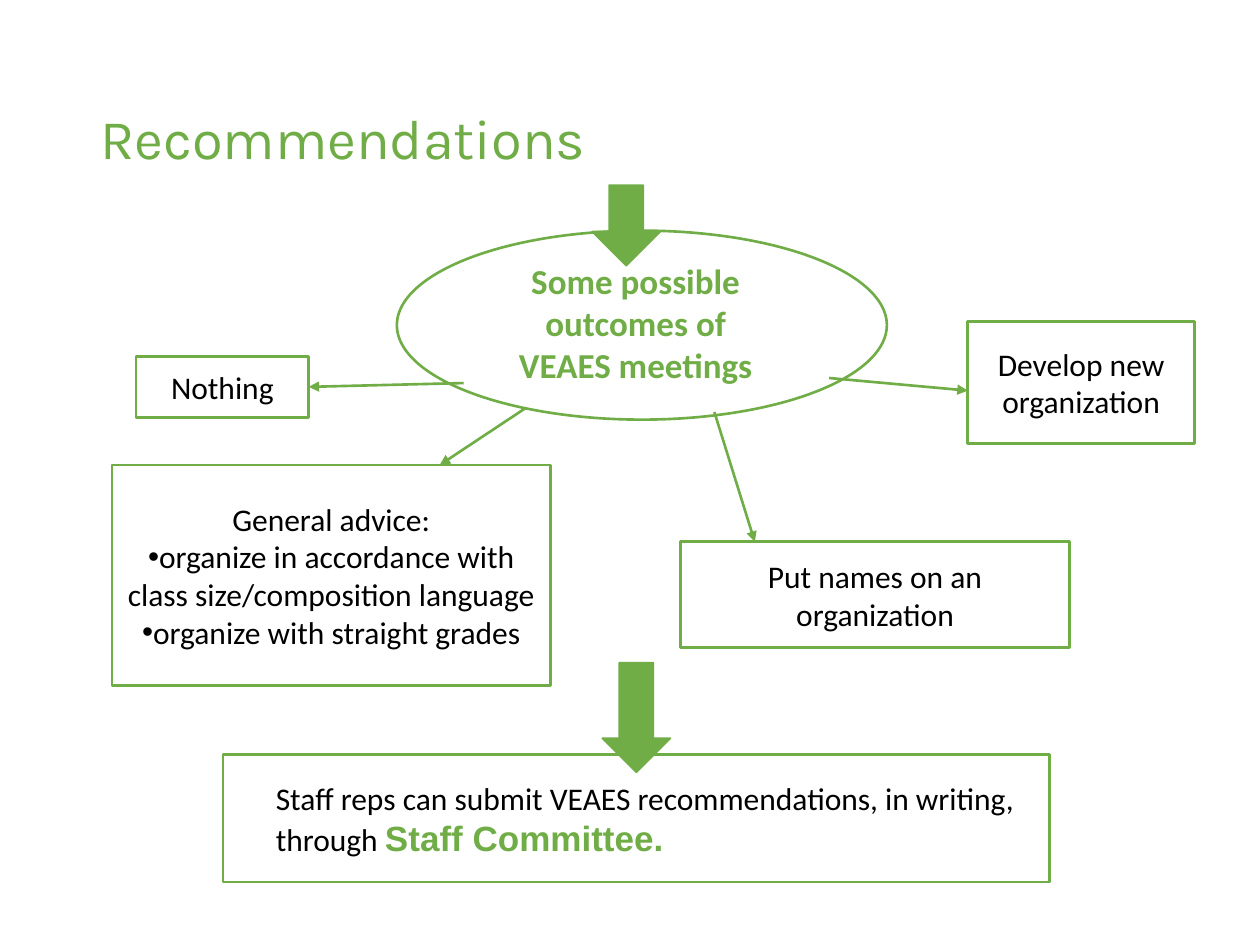
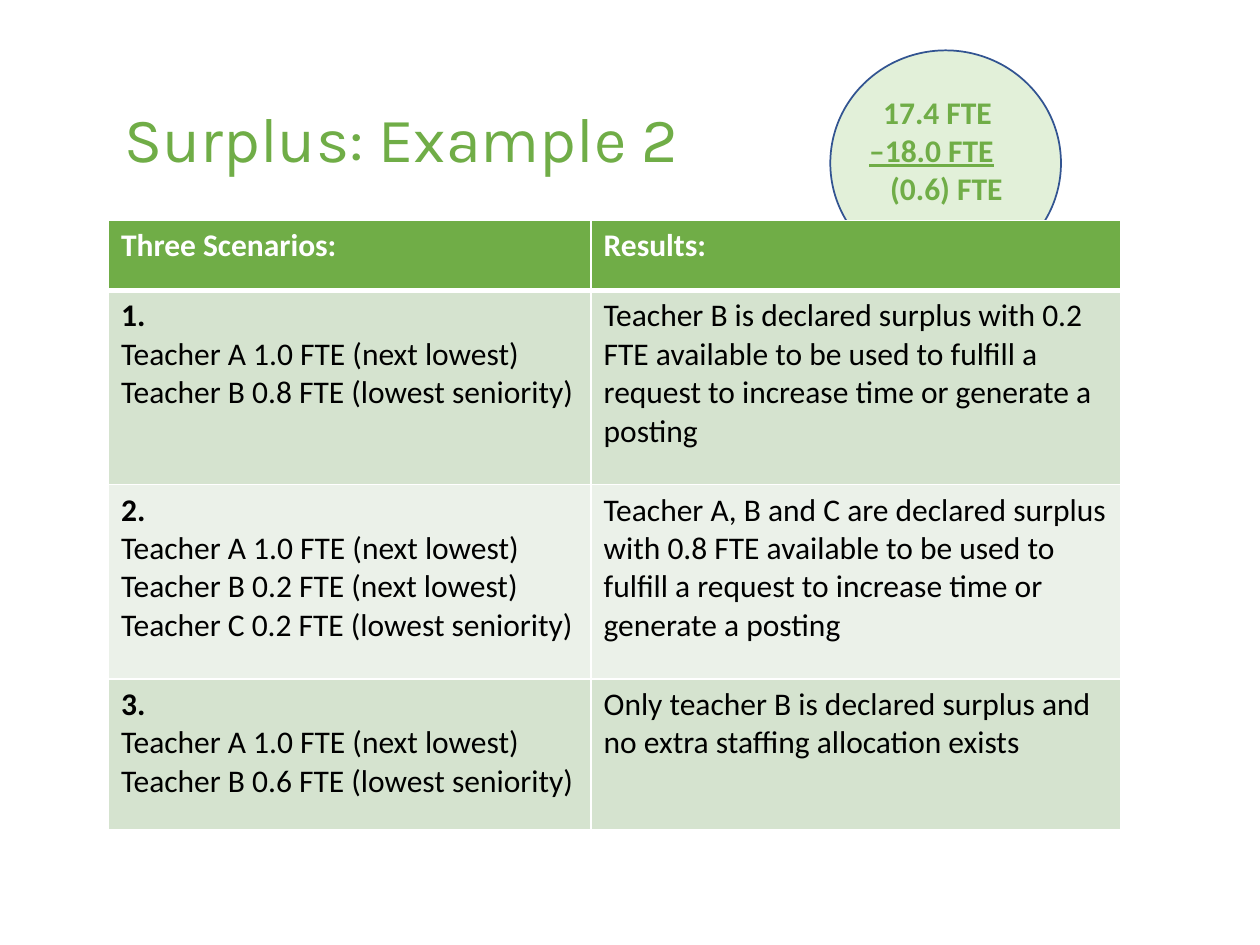
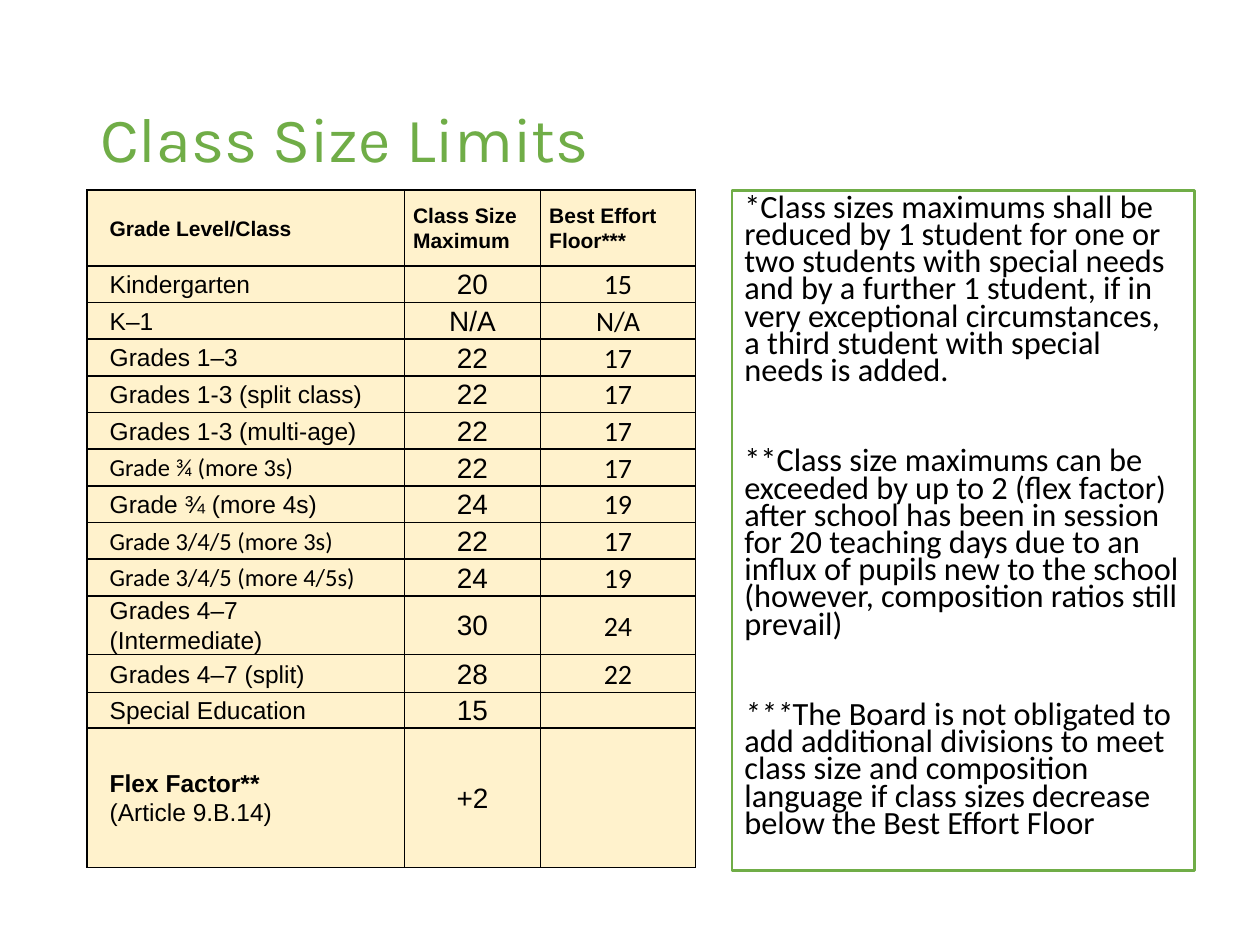
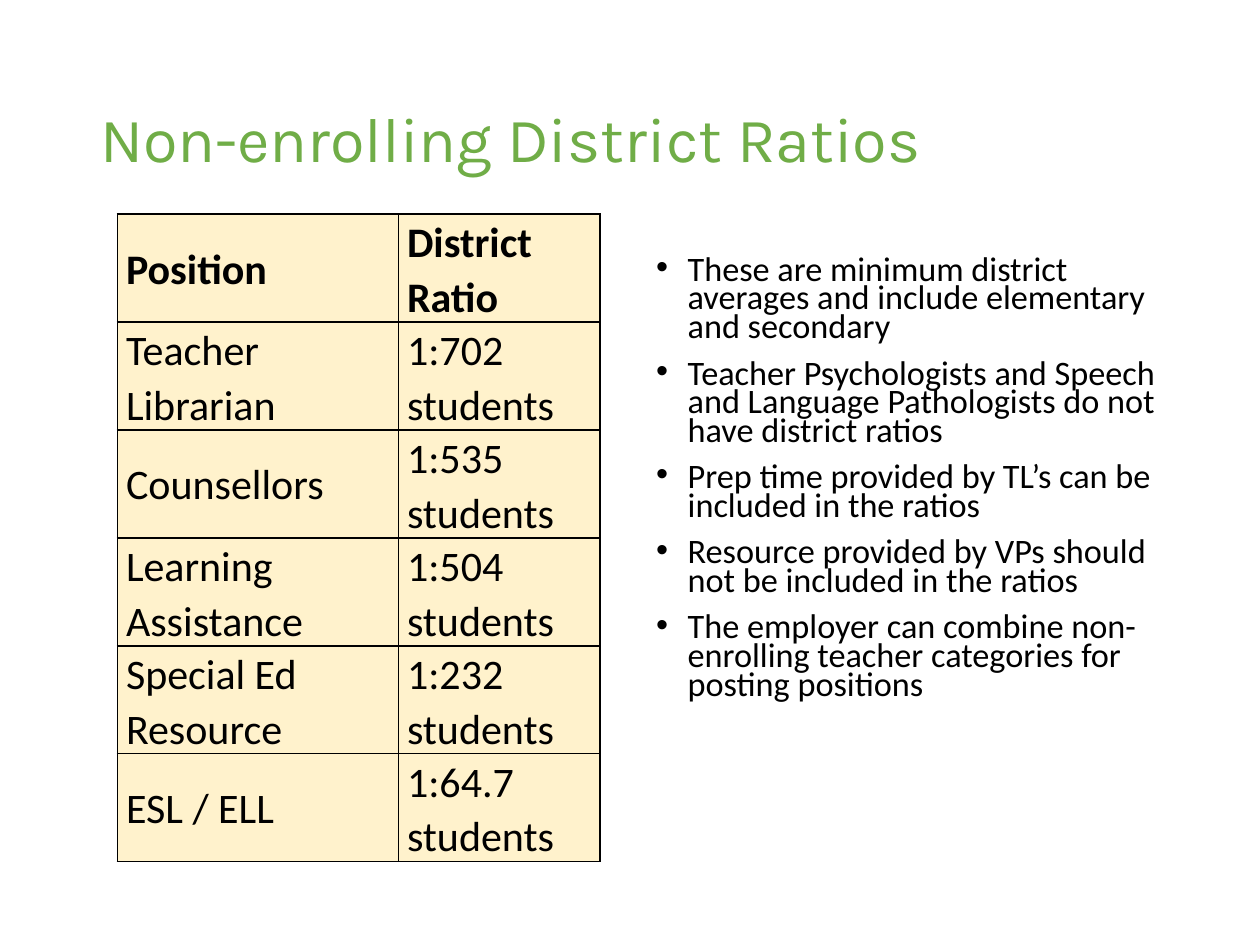
from dataclasses import dataclass, replace

from lxml import etree
from pptx import Presentation
from pptx.dml.color import RGBColor
from pptx.enum import shapes, text
from pptx.oxml import ns
from pptx.util import Pt


@dataclass(frozen=True)
class Theme:
    green: str = "70AD47"
    pale_green: str = "E2F0D9"
    band_dark: str = "D5E3CF"
    band_light: str = "EBF1E9"
    cream: str = "FFF2CC"
    navy: str = "325491"
    black: str = "000000"
    white: str = "FFFFFF"
    title_font: str = "Karla"
    body_font: str = "Calibri"
    label_font: str = "Arial"
    title_size: float = 36
    small_title_size: float = 32
    position_size: float = 24
    emphasis_size: float = 20
    bullet_size: float = 19.6
    note_size: float = 18.5
    body_size: float = 18
    number_size: float = 16
    label_size: float = 14
    header_size: float = 12
    line_width: float = 1.5


THEME = Theme()


@dataclass(frozen=True)
class TextStyle:
    font: str = THEME.body_font
    size: float = THEME.body_size
    color: str = THEME.black
    bold: bool = False
    italic: bool = False
    underline: bool = False
    align: text.PP_ALIGN = text.PP_ALIGN.LEFT
    line_spacing: float = 1.0
    space_before: float = 0
    margin: float = 0
    indent: float = 0
    bullet: bool = False


BODY = TextStyle()
CENTERED = replace(BODY, align=text.PP_ALIGN.CENTER)
GREEN_BOLD = replace(BODY, color=THEME.green, bold=True)
GRID_TEXT = replace(BODY, line_spacing=1.07)
FLOW_INSETS = (3, 3, 3, 3)
GRID_INSETS = (5, 0, 5, 0)


def color(value):
    return RGBColor.from_string(value)


def apply_font(font, style):
    font.name = style.font
    font.size = Pt(style.size)
    font.color.rgb = color(style.color)
    font.bold = style.bold
    font.italic = style.italic
    font.underline = style.underline


def format_paragraph(paragraph, style):
    paragraph.alignment = style.align
    paragraph.line_spacing = style.line_spacing
    paragraph.space_before = Pt(style.space_before)
    properties = paragraph._p.get_or_add_pPr()
    properties.set("marL", str(Pt(style.margin)))
    properties.set("indent", str(Pt(style.indent)))
    if style.bullet:
        etree.SubElement(properties, ns.qn("a:buFont"), typeface="Arial")
        etree.SubElement(properties, ns.qn("a:buChar"), char="•")
    apply_font(paragraph.font, style)


def write(frame, lines, style):
    """Fill a frame; a line is a string, a (string, style) pair or a list of such pairs."""
    for index, line in enumerate(lines):
        paragraph = frame.paragraphs[0] if index == 0 else frame.add_paragraph()
        if isinstance(line, list):
            format_paragraph(paragraph, style)
            for words, run_style in line:
                run = paragraph.add_run()
                run.text = words
                apply_font(run.font, run_style)
        else:
            words, line_style = (line, style) if isinstance(line, str) else line
            paragraph.text = words
            format_paragraph(paragraph, line_style)


def set_insets(target, insets):
    (target.margin_left, target.margin_top,
     target.margin_right, target.margin_bottom) = map(Pt, insets)


def add_titled_slide(presentation, title, left=50, size=THEME.title_size):
    slide = presentation.slides.add_slide(presentation.slide_layouts[5])
    shape = slide.shapes.title
    shape.left, shape.top, shape.width, shape.height = map(Pt, (left, 29, 621, 104))
    frame = shape.text_frame
    frame.auto_size = text.MSO_AUTO_SIZE.NONE
    frame.vertical_anchor = text.MSO_ANCHOR.MIDDLE
    write(frame, [title], TextStyle(THEME.title_font, size, THEME.green, line_spacing=0.9))
    return slide


def add_figure(slide, kind, box, fill=None, line=THEME.green, width=THEME.line_width):
    shape = slide.shapes.add_shape(kind, *map(Pt, box))
    shape.shadow.inherit = False
    if fill:
        shape.fill.solid()
        shape.fill.fore_color.rgb = color(fill)
    else:
        shape.fill.background()
    shape.line.color.rgb = color(line)
    shape.line.width = Pt(width)
    return shape


def add_flow_box(slide, box, lines):
    shape = add_figure(slide, shapes.MSO_SHAPE.RECTANGLE, box)
    frame = shape.text_frame
    frame.vertical_anchor = text.MSO_ANCHOR.MIDDLE
    set_insets(frame, FLOW_INSETS)
    write(frame, lines, CENTERED)
    return shape


def add_text(slide, box, lines, style, insets=None):
    frame = slide.shapes.add_textbox(*map(Pt, box)).text_frame
    frame.word_wrap = True
    if insets:
        set_insets(frame, insets)
    write(frame, lines, style)


def add_arrow(slide, start, end):
    connector = slide.shapes.add_connector(
        shapes.MSO_CONNECTOR.STRAIGHT, *map(Pt, start + end))
    connector.line.color.rgb = color(THEME.green)
    connector.line.width = Pt(THEME.line_width)
    etree.SubElement(connector.line._get_or_add_ln(), ns.qn("a:tailEnd"), type="triangle")
    etree.SubElement(connector._element.spPr, ns.qn("a:effectLst"))
    return connector


def add_grid(slide, left, top, column_widths, row_heights):
    table = slide.shapes.add_table(
        len(row_heights), len(column_widths), Pt(left), Pt(top),
        Pt(sum(column_widths)), Pt(sum(row_heights))).table
    table.first_row = table.horz_banding = False
    for column, width in zip(table.columns, column_widths):
        column.width = Pt(width)
    for row, height in zip(table.rows, row_heights):
        row.height = Pt(height)
    return table


def fill_cell(cell, lines, style, fill, border, top=1, bottom=1):
    properties = cell._tc.get_or_add_tcPr()
    for side, width in (("L", 1), ("R", 1), ("T", top), ("B", bottom)):
        line = etree.SubElement(properties, ns.qn(f"a:ln{side}"), w=str(Pt(width)))
        solid = etree.SubElement(line, ns.qn("a:solidFill"))
        etree.SubElement(solid, ns.qn("a:srgbClr"), val=border)
    cell.fill.solid()
    cell.fill.fore_color.rgb = color(fill)
    write(cell.text_frame, lines, style)


def fill_cream_cell(cell, lines, style):
    cell.vertical_anchor = text.MSO_ANCHOR.MIDDLE
    set_insets(cell, GRID_INSETS)
    fill_cell(cell, lines, style, THEME.cream, THEME.black)


def build_recommendations(presentation):
    slide = add_titled_slide(presentation, "Recommendations", size=THEME.small_title_size)
    add_figure(slide, shapes.MSO_SHAPE.OVAL, (226.8, 131.8, 280, 108))

    nothing = add_flow_box(slide, (77.8, 203.8, 98.6, 34.6), ["Nothing"])
    bulleted = replace(CENTERED, bullet=True)
    add_flow_box(slide, (64, 265.7, 250.6, 126), [
        "General advice:",
        ("organize in accordance with class size/composition language", bulleted),
        ("organize with straight grades", bulleted)])
    add_flow_box(slide, (388.8, 309.6, 222.5, 60.5), ["Put names on an organization"])
    add_flow_box(slide, (553, 183.6, 129.6, 69.8), ["Develop new", "organization"])

    add_arrow(slide, (265, 218.9), (177.8, 223.2)).end_connect(nothing, 3)
    for start, end in (((300.2, 233.3), (251.3, 265.7)),
                       ((408.2, 235.4), (431.3, 309.6)),
                       ((473.8, 216), (553, 223.2))):
        add_arrow(slide, start, end)

    add_text(slide, (280.8, 145.4, 164.9, 68.4),
             ["Some possible outcomes of VEAES meetings"],
             replace(GREEN_BOLD, size=THEME.emphasis_size, align=text.PP_ALIGN.CENTER),
             FLOW_INSETS)
    add_figure(slide, shapes.MSO_SHAPE.RECTANGLE, (127.4, 431.3, 472.3, 72.7))
    committee = replace(GREEN_BOLD, font=THEME.label_font, size=THEME.emphasis_size)
    add_text(slide, (150.5, 441.4, 442, 53.3), [[
        ("Staff reps can submit VEAES recommendations, in writing, through ", BODY),
        ("Staff Committee.", committee)]], BODY)
    for box in ((344.2, 378.7, 38.9, 62.6), (338.4, 105.8, 38.9, 46)):
        add_figure(slide, shapes.MSO_SHAPE.DOWN_ARROW, box, fill=THEME.green, width=1)


def build_surplus(presentation):
    slide = add_titled_slide(presentation, "Surplus: Example 2", left=64)
    add_figure(slide, shapes.MSO_SHAPE.OVAL, (474.5, 28.8, 131.8, 128.9),
               THEME.pale_green, THEME.navy, 1)
    add_text(slide, (489.6, 49.7, 124.6, 72.7), [
        ("17.4 FTE", replace(GREEN_BOLD, margin=8)),
        ("–18.0 FTE", replace(GREEN_BOLD, underline=True)),
        ("(0.6) FTE", replace(GREEN_BOLD, margin=12))], GREEN_BOLD)

    scenarios = [
        (["Teacher A 1.0 FTE (next lowest)", "Teacher B 0.8 FTE (lowest seniority)"],
         "Teacher B is declared surplus with 0.2 FTE available to be used to fulfill "
         "a request to increase time or generate a posting"),
        (["Teacher A 1.0 FTE (next lowest)", "Teacher B 0.2 FTE (next lowest)",
          "Teacher C 0.2 FTE (lowest seniority)"],
         "Teacher A, B and C are declared surplus with 0.8 FTE available to be used to "
         "fulfill a request to increase time or generate a posting"),
        (["Teacher A 1.0 FTE (next lowest)", "Teacher B 0.6 FTE (lowest seniority)"],
         "Only teacher B is declared surplus and no extra staffing allocation exists"),
    ]
    table = add_grid(slide, 62, 126, (275.8, 302.4), (40, 111, 111, 86))
    header = replace(BODY, color=THEME.white, bold=True)
    for column, heading in enumerate(("Three Scenarios:", "Results:")):
        fill_cell(table.cell(0, column), [heading], header,
                  THEME.green, THEME.white, bottom=3)
    for row, (teachers, result) in enumerate(scenarios, 1):
        band = THEME.band_dark if row % 2 else THEME.band_light
        number = (f"{row}.", replace(BODY, bold=True))
        for column, lines in enumerate(([number, *teachers], [result])):
            fill_cell(table.cell(row, column), lines, BODY, band, THEME.white,
                      top=3 if row == 1 else 1)


def build_class_sizes(presentation):
    slide = add_titled_slide(presentation, "Class Size Limits")
    note = replace(BODY, size=THEME.note_size, line_spacing=0.7, space_before=10)
    later_note = replace(note, space_before=36)
    notes = add_figure(slide, shapes.MSO_SHAPE.RECTANGLE, (418.3, 108.7, 264.2, 388.8))
    notes.text_frame.vertical_anchor = text.MSO_ANCHOR.TOP
    write(notes.text_frame, [
        ("*Class sizes maximums shall be reduced by 1 student for one or two students with "
         "special needs and by a further 1 student, if in very exceptional circumstances, "
         "a third student with special needs is added.", note),
        "**Class size maximums can be exceeded by up to 2 (flex factor) after school has "
        "been in session for 20 teaching days due to an influx of pupils new to the school "
        "(however, composition ratios still prevail)",
        [("***", replace(note, italic=True)),
         ("The Board is not obligated to add additional divisions to meet class size and "
          "composition language if class sizes decrease below the Best Effort Floor", note)],
    ], later_note)

    label = replace(GRID_TEXT, font=THEME.label_font, size=THEME.label_size, margin=8)
    calibri_label = replace(label, font=THEME.body_font)
    floor = replace(GRID_TEXT, size=THEME.number_size, align=text.PP_ALIGN.CENTER)
    maximum = replace(floor, font=THEME.label_font)
    header = replace(label, size=THEME.header_size, bold=True, margin=0)
    limits = [
        ("Kindergarten", "20", "15"),
        ("K–1", "N/A", "N/A"),
        ("Grades 1–3", "22", "17"),
        ("Grades 1-3 (split class)", "22", "17"),
        ("Grades 1-3 (multi-age)", "22", "17"),
        (("Grade ¾ (more 3s)", calibri_label), "22", "17"),
        ("Grade ¾ (more 4s)", "24", "19"),
        (("Grade 3/4/5 (more 3s)", calibri_label), "22", "17"),
        (("Grade 3/4/5 (more 4/5s)", calibri_label), "24", "19"),
        ("Grades 4–7 (Intermediate)", "30", "24"),
        ("Grades 4–7 (split)", "28", "22"),
        ("Special Education", "15", ""),
    ]
    heights = [43.2] + [20.9] * 5 + [18.7] * 4 + [33.1, 21.6, 20.2, 79.9]
    table = add_grid(slide, 49.7, 108.7, (181.4, 77.8, 88.6), heights)
    headings = ([("Grade Level/Class", replace(header, margin=8))],
                ["Class Size", "Maximum"], ["Best Effort Floor***"])
    flex = ([("Flex Factor**", replace(label, bold=True)), "(Article 9.B.14)"], ["+2"], [""])
    for column, lines in enumerate(headings):
        fill_cream_cell(table.cell(0, column), lines, header)
    rows = [[[entry] for entry in limit] for limit in limits] + [flex]
    for row, cells in enumerate(rows, 1):
        for column, (lines, style) in enumerate(zip(cells, (label, maximum, floor))):
            fill_cream_cell(table.cell(row, column), lines, style)


def build_ratios(presentation):
    slide = add_titled_slide(presentation, "Non-enrolling District Ratios")
    add_text(slide, (367.9, 144, 302.4, 303.8), [
        "These are minimum district averages and include elementary and secondary",
        "Teacher Psychologists and Speech and Language Pathologists do not have district ratios",
        "Prep time provided by TL’s can be included in the ratios",
        "Resource provided by VPs should not be included in the ratios",
        "The employer can combine non-enrolling teacher categories for posting positions",
    ], replace(BODY, size=THEME.bullet_size, line_spacing=0.7, space_before=10,
               margin=18, indent=-18, bullet=True))

    ratios = [
        ("Position", "District Ratio"),
        ("Teacher Librarian", "1:702 students"),
        ("Counsellors", "1:535 students"),
        ("Learning Assistance", "1:504 students"),
        ("Special Ed Resource", "1:232 students"),
        ("ESL / ELL", "1:64.7 students"),
    ]
    table = add_grid(slide, 67, 122.4, (160.6, 115.2), [35.5] * len(ratios))
    for row, entries in enumerate(ratios):
        style = replace(GRID_TEXT, size=THEME.position_size, bold=row == 0)
        for column, entry in enumerate(entries):
            fill_cream_cell(table.cell(row, column), [entry], style)


def main():
    presentation = Presentation()
    presentation.slide_width, presentation.slide_height = Pt(720), Pt(540)
    build_recommendations(presentation)
    build_surplus(presentation)
    build_class_sizes(presentation)
    build_ratios(presentation)
    presentation.save("out.pptx")


if __name__ == "__main__":
    main()
